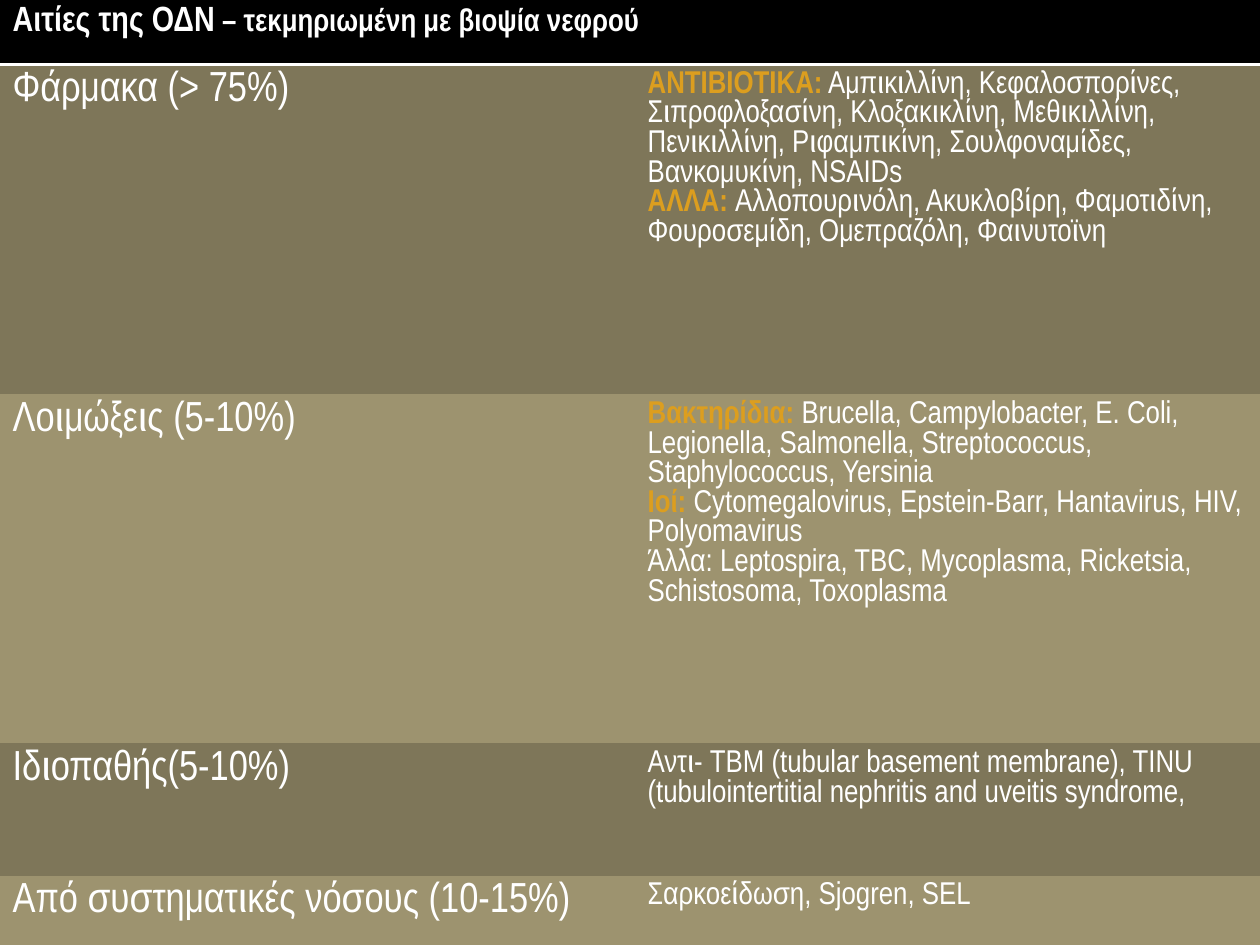
import pptx
import pptx.util
import pptx.dml.color
import pptx.oxml
import pptx.oxml.ns

Pt = pptx.util.Pt
RGB = pptx.dml.color.RGBColor

WHITE = RGB(0xFF, 0xFF, 0xFF)
BLACK = RGB(0x00, 0x00, 0x00)
GREY = RGB(0x3F, 0x3F, 0x3F)
GOLD = RGB(0xDC, 0x9E, 0x1F)
DARK = RGB(0x7E, 0x76, 0x59)
LIGHT = RGB(0x9D, 0x93, 0x6F)

PLAIN = "{2D5ABB26-0587-4C30-8999-92F81FD0307C}"  # no style, no grid

# Each cause with its paragraphs of (gold label, text)
CAUSES = [
    ("Φάρμακα (> 75%)", [
        ("ΑΝΤΙΒΙΟΤΙΚΑ:", " Αμπικιλλίνη, Κεφαλοσπορίνες, Σιπροφλοξασίνη, "
         "Κλοξακικλίνη, Μεθικιλλίνη, Πενικιλλίνη, Ριφαμπικίνη, "
         "Σουλφοναμίδες, Βανκομυκίνη, NSAIDs"),
        ("ΑΛΛΑ: ", "Αλλοπουρινόλη, Ακυκλοβίρη, Φαμοτιδίνη, "
         "Φουροσεμίδη, Ομεπραζόλη, Φαινυτοϊνη")]),
    ("Λοιμώξεις (5-10%)", [
        ("Βακτηρίδια: ", "Brucella, Campylobacter, E. Coli, Legionella, "
         "Salmonella, Streptococcus, Staphylococcus, Yersinia"),
        ("Ιοί: ", "Cytomegalovirus, Epstein-Barr, Hantavirus, HIV, "
         "Polyomavirus"),
        ("", "Άλλα: Leptospira, TBC, Mycoplasma, Ricketsia, "
         "Schistosoma, Toxoplasma")]),
    ("Ιδιοπαθής(5-10%)", [
        ("", "Αντι- TBM (tubular basement membrane), TINU "
         "(tubulointertitial nephritis and uveitis syndrome,")]),
    ("Από συστηματικές νόσους (10-15%)", [
        ("", "Σαρκοείδωση, Sjogren, SEL")]),
]
HEIGHTS = [36.7, 188.6, 199.5, 75.6, 39.6]
WIDTH = 362.9


class Deck:
    font = "Arial Narrow"

    def __init__(self, slide):
        self.slide = slide

    def back(self):
        fill = self.slide.background.fill
        fill.gradient()
        fill.gradient_angle = 270
        for stop, color, place in zip(fill.gradient_stops, (GREY, BLACK), (0, 0.31)):
            stop.color.rgb = color
            stop.position = place

    def table(self, heights, width):
        frame = self.slide.shapes.add_table(
            len(heights), 2, 0, 0, Pt(2 * width), Pt(sum(heights)))
        grid = frame.table
        grid.first_row = grid.horz_banding = False
        grid._tbl.tblPr.find(pptx.oxml.ns.qn("a:tableStyleId")).text = PLAIN
        for col in grid.columns:
            col.width = Pt(width)
        for row, height in zip(grid.rows, heights):
            row.height = Pt(height)
        return grid

    def cell(self, cell, paras, size, fill):
        """Fill a cell; each paragraph is a list of (text, run format)."""
        cell.fill.solid()
        cell.fill.fore_color.rgb = fill
        frame = cell.text_frame
        for i, runs in enumerate(paras):
            para = frame.add_paragraph() if i else frame.paragraphs[0]
            para.font.name = self.font
            para.font.size = Pt(size)
            para.font.color.rgb = WHITE
            for text, look in runs:
                run = para.add_run()
                run.text = text
                run.font.bold = look.get("bold", False)
                if "size" in look:
                    run.font.size = Pt(look["size"])
                if "color" in look:
                    run.font.color.rgb = look["color"]

    def rule(self, cell, color, weight):
        """Draw the bottom border of a cell."""
        line = pptx.oxml.parse_xml(
            f'<a:lnB {pptx.oxml.ns.nsdecls("a")} w="{Pt(weight)}"><a:solidFill>'
            f'<a:srgbClr val="{color}"/></a:solidFill></a:lnB>')
        cell._tc.get_or_add_tcPr().insert(0, line)


def main():
    prs = pptx.Presentation()
    prs.slide_width, prs.slide_height = Pt(720), Pt(540)
    deck = Deck(prs.slides.add_slide(prs.slide_layouts[6]))
    deck.back()
    grid = deck.table(HEIGHTS, WIDTH)

    # Heading across both columns
    head = grid.cell(0, 0)
    head.merge(grid.cell(0, 1))
    deck.cell(head, [[
        ("Αιτίες της ΟΔΝ", {"bold": True}),
        (" – τεκμηριωμένη με βιοψία νεφρού", {"bold": True, "size": 18}),
    ]], 20, BLACK)
    for col in range(2):
        deck.rule(grid.cell(0, col), WHITE, 2)

    # Causes on the left, details on the right
    gold = {"bold": True, "color": GOLD}
    for row, (cause, notes) in enumerate(CAUSES, 1):
        fill = DARK if row % 2 else LIGHT
        deck.cell(grid.cell(row, 0), [[(cause, {})]], 24, fill)
        paras = [([(label, gold)] if label else []) + [(text, {})]
                 for label, text in notes]
        deck.cell(grid.cell(row, 1), paras, 18, fill)

    prs.save("out.pptx")


if __name__ == "__main__":
    main()
